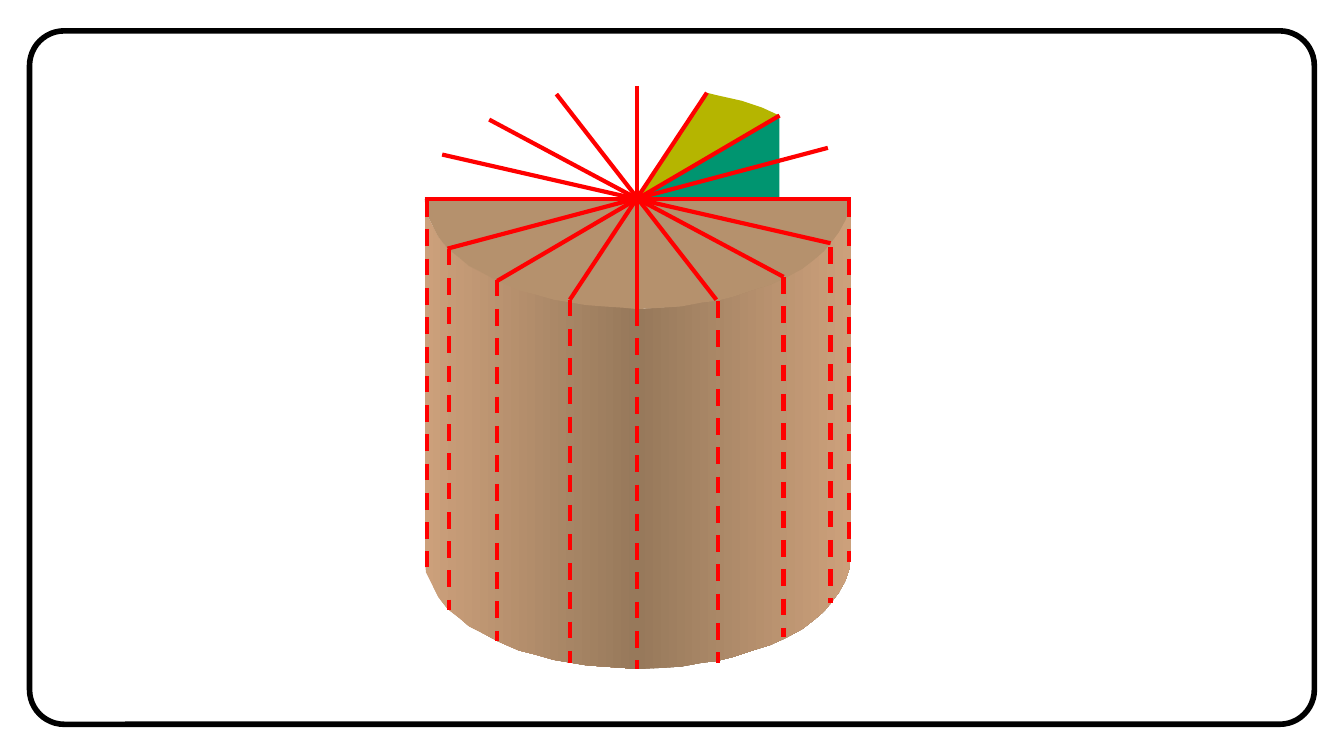
"""Build a slide with a half cylinder cut into wedges and marked with red rays."""
from lxml import etree
from pptx import Presentation
from pptx.dml.color import RGBColor
from pptx.enum.dml import MSO_LINE
from pptx.enum.shapes import MSO_CONNECTOR, MSO_SHAPE
from pptx.oxml.ns import qn
from pptx.util import Inches, Pt

DASH = MSO_LINE.DASH
ROUND = MSO_SHAPE.ROUNDED_RECTANGLE
LINE = MSO_CONNECTOR.STRAIGHT
WHITE = RGBColor(255, 255, 255)
BLACK = RGBColor(0, 0, 0)
RED = RGBColor(255, 0, 0)
TAN = RGBColor(181, 145, 109)
GOLD = RGBColor(181, 181, 0)
GREEN = RGBColor(0, 149, 112)
DARK = RGBColor(151, 121, 91)
PALE = RGBColor(204, 160, 123)

deck = Presentation()
deck.slide_width = Inches(10)
deck.slide_height = deck.slide_width * 9 // 16
UNIT = deck.slide_width // 1000
slide = deck.slides.add_slide(deck.slide_layouts[6])
shapes = slide.shapes


def add_face(points, *fills):
    pen = shapes.build_freeform(*points[0], scale=UNIT)
    pen.add_line_segments(points[1:], close=True)
    face = pen.convert_to_shape()
    face.shadow.inherit = False
    face.line.fill.background()
    if len(fills) == 1:
        face.fill.solid()
        face.fill.fore_color.rgb = fills[0]
        return
    face.fill.gradient()
    face.fill.gradient_angle = 0
    for stop, tone in zip(face.fill.gradient_stops, fills):
        stop.color.rgb = tone


def add_ray(start, end, dash=None):
    ray = shapes.add_connector(LINE, *[v * UNIT for v in start + end])
    ray.line.color.rgb = RED
    ray.line.width = Pt(2.25)
    if dash:
        ray.line.dash_style = dash
    etree.SubElement(ray._element.spPr, qn("a:effectLst"))


frame = shapes.add_shape(ROUND, *[v * UNIT for v in (22, 23, 956, 516)])
frame.adjustments[0] = 0.05
frame.shadow.inherit = False
frame.fill.solid()
frame.fill.fore_color.rgb = WHITE
frame.line.color.rgb = BLACK
frame.line.width = Pt(3)

HUB = (474, 148)
DEPTH = 268
RIM = [
    (316, 148), (317, 158), (322, 168), (326, 176),
    (333, 185), (342, 192), (349, 198), (357, 202),
    (370, 209), (386, 216), (398, 219), (412, 223),
    (424, 225), (436, 227), (449, 228), (464, 229),
    (474, 230), (492, 229), (507, 228), (523, 225),
    (533, 224), (545, 221), (560, 216), (573, 212),
    (584, 207), (597, 200), (606, 193), (613, 187),
    (618, 181), (624, 173), (629, 164), (632, 155), (633, 148),
]
ARC = [(526, 69), (534, 71), (552, 75), (567, 80), (580, 86)]

add_face([HUB, ARC[-1], (ARC[-1][0], HUB[1])], GREEN)
add_face([HUB] + ARC, GOLD)

MID = len(RIM) // 2
for rim, tones in ((RIM[:MID + 1], (PALE, DARK)), (RIM[MID:], (DARK, PALE))):
    low = [(x, y + DEPTH) for x, y in reversed(rim)]
    add_face(rim + low, *tones)

for i in range(0, len(RIM) - 1, 4):
    add_face([HUB] + RIM[i:i + 5], TAN)

RAYS = [
    ((316, 148), (633, 148)), ((474, 64), (474, 231)),
    ((329, 115), (618, 181)), ((364, 89), (583, 206)),
    ((414, 70), (533, 223)), ((333, 185), (616, 110)),
    ((370, 209), (580, 86)), ((424, 223), (526, 69)),
]
for start, end in RAYS:
    add_ray(start, end)

DROPS = [
    (474, 230, 498), (424, 223, 493), (534, 224, 493),
    (583, 206, 474), (618, 184, 449), (632, 149, 418),
    (370, 208, 477), (334, 185, 454), (318, 149, 422),
]
for x, top, base in DROPS:
    add_ray((x, top), (x, base), dash=DASH)

deck.save("out.pptx")
